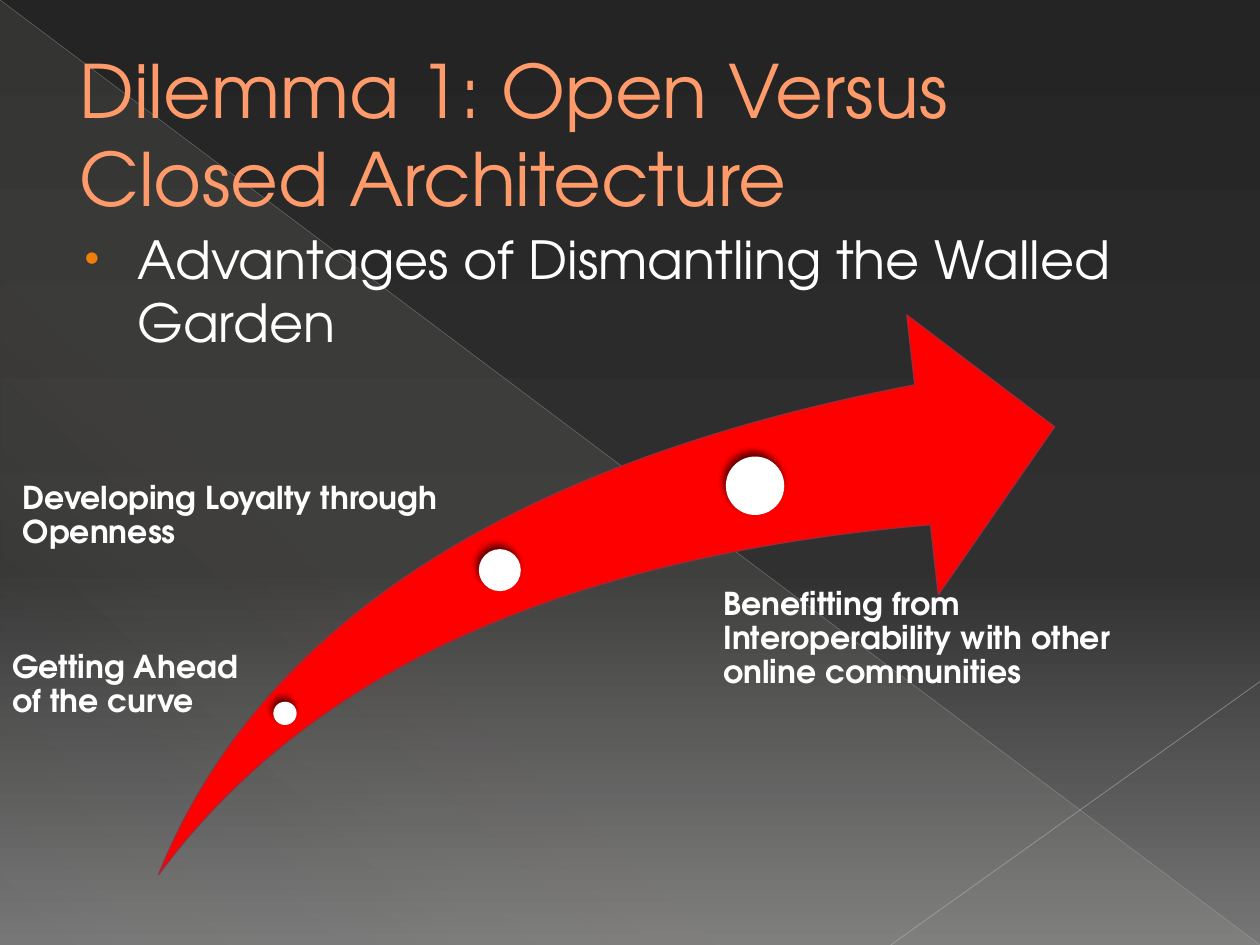
from lxml import etree
from pptx import Presentation
from pptx.dml.color import RGBColor
from pptx.enum.shapes import MSO_CONNECTOR, MSO_SHAPE
from pptx.enum.text import MSO_ANCHOR, MSO_AUTO_SIZE, PP_ALIGN
from pptx.oxml.ns import qn
from pptx.util import Pt

TRIANGLE = MSO_SHAPE.RIGHT_TRIANGLE
SWOOSH = MSO_SHAPE.SWOOSH_ARROW
CIRCLE = MSO_SHAPE.OVAL
STRAIGHT = MSO_CONNECTOR.STRAIGHT
TOP, MIDDLE = MSO_ANCHOR.TOP, MSO_ANCHOR.MIDDLE
LEFT = PP_ALIGN.LEFT
NO_AUTOFIT = MSO_AUTO_SIZE.NONE
FONT = "TeX Gyre Adventor"
WHITE = "FFFFFF"
SLIDE_BOX = (0, 0, 720, 540)
ARROW_BOX = (90.7, 180, 511.9, 319.7)
MILESTONES = [
    ((156.2, 401, 13.3), (0, 372.2, 157, 43.2), 7.2,
     "Getting Ahead of the curve"),
    ((273.6, 313.8, 24), (0, 275.8, 256.3, 57.6), 13,
     "Developing Loyalty through Openness"),
    ((414.8, 260.9, 33.4), (396, 336.2, 272.2, 122.4), 17.3,
     "Benefitting from Interoperability with other online communities"),
]


def color(hex_string):
    return RGBColor.from_string(hex_string)


def points(values):
    return [Pt(value) for value in values]


def apply_format(target, values):
    for name, value in values.items():
        setattr(target, name, value)


def add_xml(parent, tag, **attributes):
    child = etree.SubElement(parent, qn(tag))
    for name, value in attributes.items():
        child.set(name, str(value))
    return child


def add_color(parent, hex_string, opacity=100):
    element = add_xml(parent, "a:srgbClr", val=hex_string)
    if opacity < 100:
        add_xml(element, "a:alpha", val=opacity * 1000)


def set_gradient(fill, element, stops, angle):
    fill.gradient()
    gradient = element.find(".//" + qn("a:gradFill"))
    for child in list(gradient):
        gradient.remove(child)
    stop_list = add_xml(gradient, "a:gsLst")
    for position, hex_string, opacity in stops:
        stop = add_xml(stop_list, "a:gs", pos=position * 1000)
        add_color(stop, hex_string, opacity)
    add_xml(gradient, "a:lin", ang=angle * 60000, scaled=0)


def add_filled_shape(shapes, kind, box, fill):
    shape = shapes.add_shape(kind, *points(box))
    shape.shadow.inherit = False
    shape.fill.solid()
    shape.fill.fore_color.rgb = color(fill)
    shape.line.fill.background()
    return shape


def add_backdrop_line(slide, ends, hex_string, width, opacity):
    line = slide.shapes.add_connector(STRAIGHT, *points(ends))
    line.line.width = Pt(width)
    line.line.color.rgb = color(hex_string)
    line_color = line._element.spPr.find(".//" + qn("a:srgbClr"))
    add_xml(line_color, "a:alpha", val=opacity * 1000)
    add_xml(line._element.spPr, "a:effectLst")


def write_text(shape, box, text, size, hex_string, frame_format, paragraph_format, bold=False):
    apply_format(shape, dict(zip(("left", "top", "width", "height"), points(box))))
    frame = shape.text_frame
    apply_format(frame, {"word_wrap": True, "auto_size": NO_AUTOFIT, **frame_format})
    frame.text = text
    paragraph = frame.paragraphs[0]
    apply_format(paragraph, {"alignment": LEFT, **paragraph_format})
    font = paragraph.runs[0].font
    apply_format(font, {"name": FONT, "size": Pt(size), "bold": bold})
    font.color.rgb = color(hex_string)
    return paragraph._p.get_or_add_pPr()


def add_backdrop(slide, box):
    left, top, width, height = box
    right, bottom = left + width, top + height
    set_gradient(slide.background.fill, slide._element,
                 [(0, "242424", 100), (60, "303030", 100), (100, "767676", 100)], 90)
    triangle = add_filled_shape(slide.shapes, TRIANGLE, box, WHITE)
    set_gradient(triangle.fill, triangle._element,
                 [(0, "E3DED1", 10), (70, "E3DED1", 8), (100, "E3DED1", 1)], 133)
    add_backdrop_line(slide, (left, top, right, bottom), "B6B6B6", 0.39, 35)
    add_backdrop_line(slide, (right, top + 389.5, left + 509, bottom), "BFBFBF", 0.47, 45)


def place_title(slide, box):
    title = slide.shapes.title
    slide.shapes._spTree.append(title._element)
    properties = write_text(title, box, "Dilemma 1: Open Versus Closed Architecture",
                            42, "FF9B6A", {"vertical_anchor": MIDDLE}, {})
    properties.set("marL", str(Pt(38.2)))


def place_list(slide, box):
    body = slide.placeholders[1]
    slide.shapes._spTree.append(body._element)
    properties = write_text(body, box, "Advantages of Dismantling the Walled Garden",
                            30, WHITE, {"vertical_anchor": TOP}, {})
    properties.set("marL", str(Pt(35.3)))
    properties.set("indent", str(Pt(-30.2)))
    add_color(add_xml(properties, "a:buClr"), "F07F09")
    add_xml(properties, "a:buSzPct", val=80000)
    add_xml(properties, "a:buFont", typeface="Arial")
    add_xml(properties, "a:buChar", char="•")


def add_milestone(shapes, marker, box, inset, text):
    left, top, diameter = marker
    circle = add_filled_shape(shapes, CIRCLE, (left, top, diameter, diameter), WHITE)
    effects = circle._element.spPr.find(qn("a:effectLst"))
    shadow = add_xml(effects, "a:outerShdw", blurRad=Pt(4), dist=Pt(3),
                     dir=245 * 60000, rotWithShape=0)
    add_color(shadow, "000000", 60)
    label = shapes.add_textbox(*points(box))
    write_text(label, box, text, 18, WHITE,
               {"margin_left": Pt(inset), "margin_top": 0, "margin_right": 0,
                "margin_bottom": 0, "vertical_anchor": TOP},
               {"line_spacing": 0.9, "space_after": Pt(6.3)}, bold=True)


def add_growth_arrow(slide, box):
    shapes = slide.shapes.add_group_shape().shapes
    arrow = add_filled_shape(shapes, SWOOSH, box, "FF0000")
    arrow.adjustments[0] = 0.25
    arrow.adjustments[1] = 0.25
    arrow.line.color.rgb = color("9F2936")
    arrow.line.width = Pt(0.75)
    for milestone in MILESTONES:
        add_milestone(shapes, *milestone)


def main():
    presentation = Presentation()
    apply_format(presentation, {"slide_width": Pt(720), "slide_height": Pt(540)})
    slide = presentation.slides.add_slide(presentation.slide_layouts[1])
    add_backdrop(slide, SLIDE_BOX)
    place_title(slide, (0, 20.9, 684, 110.2))
    place_list(slide, (36, 126, 648, 360))
    add_growth_arrow(slide, ARROW_BOX)
    presentation.save("out.pptx")


if __name__ == "__main__":
    main()
